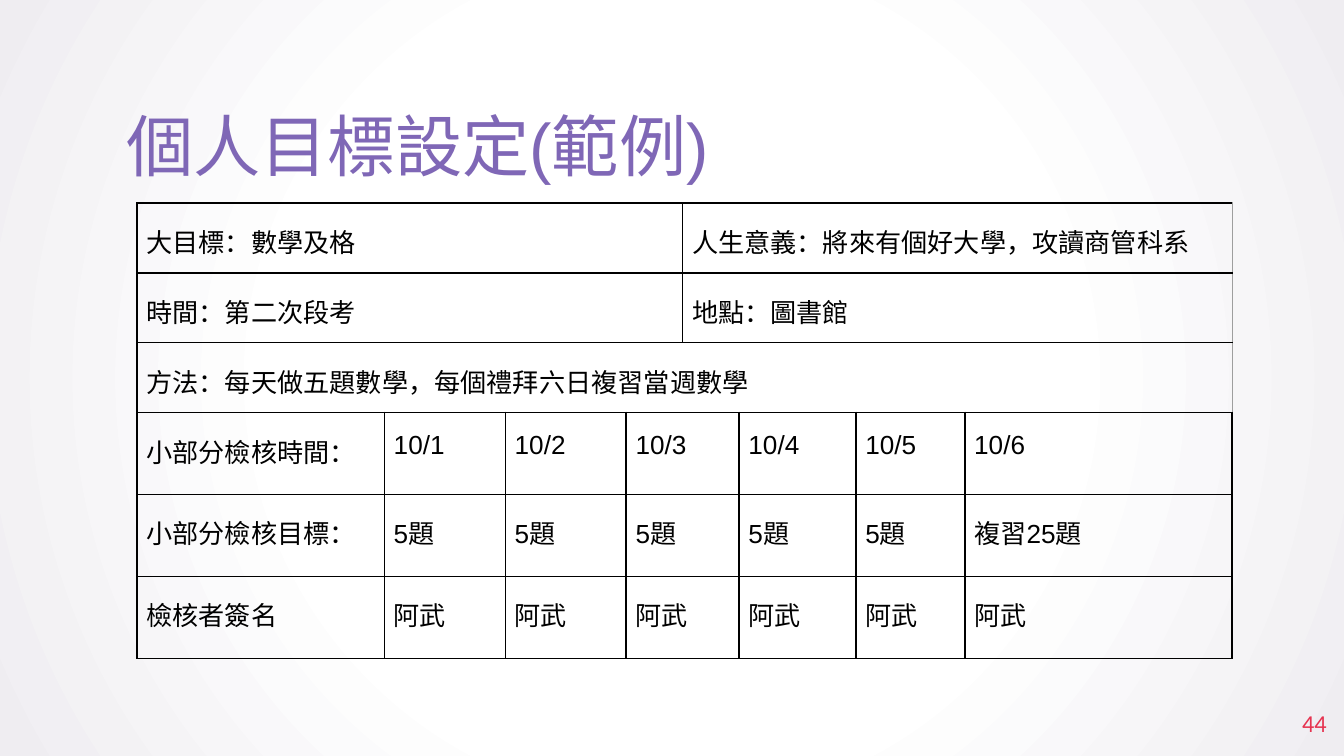
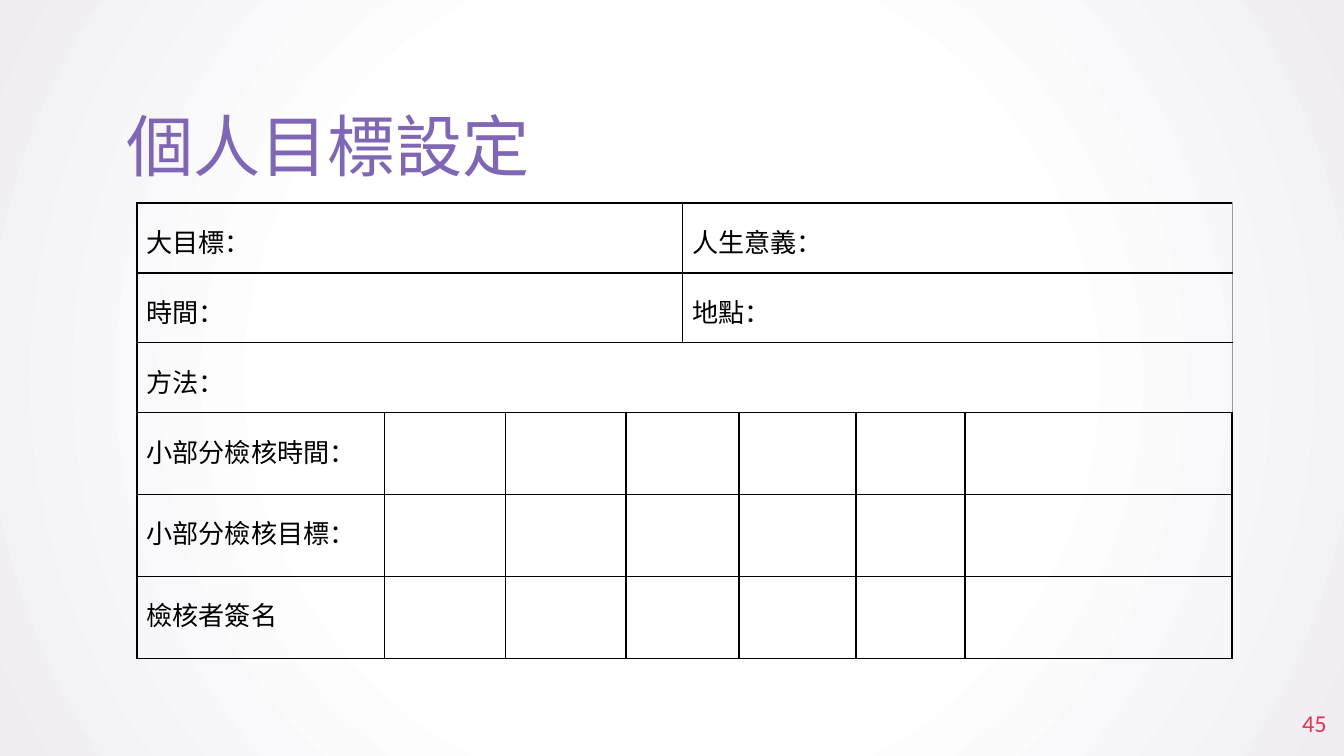
from itertools import accumulate
from pptx import Presentation
from pptx.dml.color import RGBColor
from pptx.enum.text import MSO_ANCHOR, PP_ALIGN
from pptx.oxml import parse_xml
from pptx.oxml.ns import nsdecls, qn
from pptx.util import Inches, Pt

# Content: each slide fills in the same form
LABELS = [
    ["大目標：", "人生意義："],
    ["時間：", "地點："],
    ["方法："],
    ["小部分檢核時間："],
    ["小部分檢核目標："],
    ["檢核者簽名"],
]
SAMPLE = [
    ["數學及格", "將來有個好大學，攻讀商管科系"],
    ["第二次段考", "圖書館"],
    ["每天做五題數學，每個禮拜六日複習當週數學"],
    ["10/1", "10/2", "10/3", "10/4", "10/5", "10/6"],
    ["5題"] * 5 + ["複習25題"],
    ["阿武"] * 6,
]
BLANK = [["", ""], ["", ""], [""]] + [[""] * 6] * 3
SLIDES = [("個人目標設定(範例)", SAMPLE, 44), ("個人目標設定", BLANK, 45)]

# Form layout
HEAD = 3  # rows whose answer follows the label in the same cell
CHECK = [1, 1, 1, 2, 1, 1, 1]
SPANS = [[4, 4], [4, 4], [8]] + [CHECK] * 3
COLS = [1.84, 0.9, 0.9, 0.42, 0.42, 0.87, 0.81, 1.99]
ROWS = [0.52] * HEAD + [0.61] * 3

# Shared look
PURPLE = RGBColor(0x7F, 0x67, 0xB6)
RED = RGBColor(0xE6, 0x33, 0x50)
BLACK = RGBColor(0, 0, 0)
GREY = RGBColor(0x9E, 0x9E, 0x9E)
WHITE = RGBColor(0xFF, 0xFF, 0xFF)
LILAC = RGBColor(0xEF, 0xED, 0xF1)
PLAIN = "{2D5ABB26-0587-4C30-8999-92F81FD0307C}"  # table style without grid


def set_back(master):
    """Give the master its round gradient."""
    master.background.fill.solid()
    stops = "".join(
        f'<a:gs pos="{pos * 1000}"><a:srgbClr val="{color}"/></a:gs>'
        for pos, color in [(0, WHITE), (50, WHITE), (100, LILAC)])
    grad = parse_xml(
        f'<a:gradFill {nsdecls("a")} rotWithShape="1"><a:gsLst>{stops}</a:gsLst>'
        '<a:path path="circle"><a:fillToRect l="50000" t="50000" '
        'r="50000" b="50000"/></a:path></a:gradFill>')
    solid = next(master.element.iter(qn("a:solidFill")))
    solid.getparent().replace(solid, grad)


def set_text(frame, text, name, size, color, space=1.0, align=PP_ALIGN.LEFT):
    frame.text = text
    para = frame.paragraphs[0]
    para.alignment, para.line_spacing = align, space
    for run in para.runs:
        font = run.font
        font.name, font.size, font.color.rgb = name, Pt(size), color


def set_box(shape, left, top, width, height, anchor):
    shape.left, shape.top = Inches(left), Inches(top)
    shape.width, shape.height = Inches(width), Inches(height)
    frame = shape.text_frame
    frame.margin_left = frame.margin_right = 0
    frame.margin_top = frame.margin_bottom = 0
    frame.word_wrap, frame.vertical_anchor = True, anchor
    return frame


def set_cell(cell, text, edge):
    """Fill one cell; edge is the colour and width of its right border."""
    cell.margin_left = cell.margin_right = Inches(0.07)
    cell.margin_top = cell.margin_bottom = Inches(0.1)
    set_text(cell.text_frame, text, "Arial", 14, BLACK, 1.15)
    cell.fill.background()
    props = cell._tc.get_or_add_tcPr()
    for spot, side in enumerate("LRTB"):
        color, width = edge if side == "R" else (BLACK, 1)
        props.insert(spot, parse_xml(
            f'<a:ln{side} {nsdecls("a")} w="{Pt(width)}"><a:solidFill>'
            f'<a:srgbClr val="{color}"/></a:solidFill></a:ln{side}>'))


def add_form(slide, answers):
    frame = slide.shapes.add_table(
        len(ROWS), len(COLS), Inches(1.02), Inches(1.51),
        Inches(sum(COLS)), Inches(sum(ROWS)))
    table = frame.table
    table.first_row = table.horz_banding = False
    next(table._tbl.iter(qn("a:tableStyleId"))).text = PLAIN
    for col, width in zip(table.columns, COLS):
        col.width = Inches(width)
    for row, height in zip(table.rows, ROWS):
        row.height = Inches(height)

    for r, (labels, given, spans) in enumerate(zip(LABELS, answers, SPANS)):
        if r < HEAD:
            texts = [label + text for label, text in zip(labels, given)]
        else:
            texts = labels + given
        for text, span, end in zip(texts, spans, accumulate(spans)):
            cell = table.cell(r, end - span)
            if span > 1:
                cell.merge(table.cell(r, end - 1))
            pale = r < HEAD and end == len(COLS)
            set_cell(cell, text, (GREY, 0.75) if pale else (BLACK, 1))


def add_page(deck, title, answers, number):
    slide = deck.slides.add_slide(deck.slide_layouts[5])
    # Page number
    box = slide.shapes.add_textbox(0, 0, 0, 0)
    frame = set_box(box, 9.27, 5.16, 0.6, 0.43, MSO_ANCHOR.MIDDLE)
    set_text(frame, str(number), "Calibri", 13, RED, align=PP_ALIGN.RIGHT)
    # Title
    frame = set_box(slide.shapes.title, 0.94, 0.94, 8.13, 0.43, MSO_ANCHOR.BOTTOM)
    set_text(frame, title, "Arial", 36, PURPLE, 0.8)
    # Goal form
    add_form(slide, answers)


def main():
    deck = Presentation()
    deck.slide_width = Inches(10)
    deck.slide_height = deck.slide_width * 9 // 16
    set_back(deck.slide_master)
    for title, answers, number in SLIDES:
        add_page(deck, title, answers, number)
    deck.save("out.pptx")


if __name__ == "__main__":
    main()
